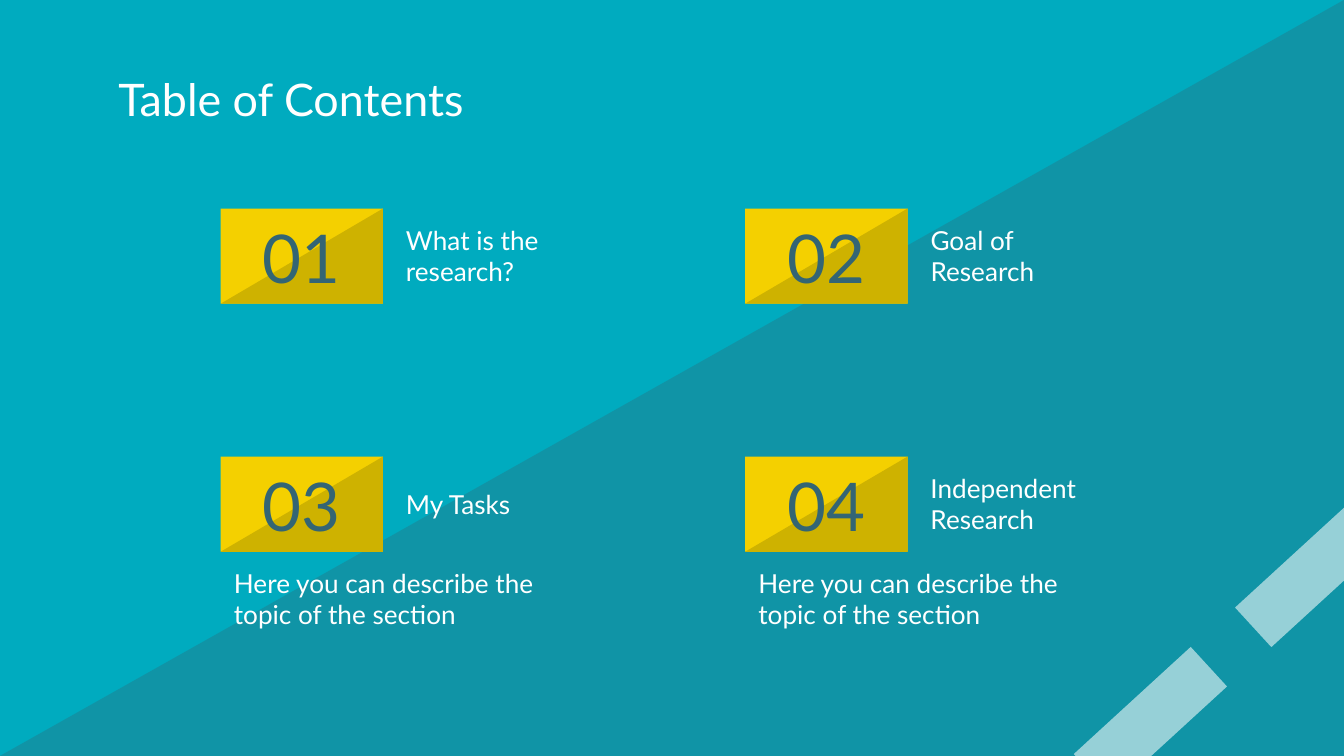
from lxml.etree import SubElement
from pptx import Presentation
from pptx.dml.color import RGBColor
from pptx.enum.shapes import MSO_SHAPE
from pptx.enum.text import MSO_ANCHOR, MSO_AUTO_SIZE, PP_ALIGN
from pptx.oxml.ns import qn
from pptx.util import Pt

TEAL = RGBColor(0x00, 0xAB, 0xBF)
NAVY = RGBColor(0x33, 0x65, 0x74)
YELLOW = RGBColor(0xF4, 0xD0, 0x00)
MUSTARD = RGBColor(0xCE, 0xB2, 0x00)
WHITE = RGBColor(0xFF, 0xFF, 0xFF)

CARD_WIDTH, CARD_HEIGHT = 87, 51
COLUMNS = (118.2, 399.2)
ROWS = (111.7, 244.6)
DESCRIPTION = "Here you can describe the topic of the section"

prs = Presentation()
prs.slide_width, prs.slide_height = Pt(720), Pt(405)
slide = prs.slides.add_slide(prs.slide_layouts[5])
slide.background.fill.solid()
slide.background.fill.fore_color.rgb = TEAL


def add_block(preset, left, top, width, height, color, opacity=100):
    block = slide.shapes.add_shape(preset, Pt(left), Pt(top), Pt(width), Pt(height))
    block.shadow.inherit = False
    block.line.fill.background()
    block.fill.solid()
    block.fill.fore_color.rgb = color
    if opacity < 100:
        tint = block._element.spPr.find(qn("a:solidFill"))[0]
        SubElement(tint, qn("a:alpha"), val=str(opacity * 1000))
    if preset == MSO_SHAPE.RIGHT_TRIANGLE:
        block._element.spPr.find(qn("a:xfrm")).set("flipH", "1")
    return block


def write(holder, text, size, color=WHITE, align=PP_ALIGN.LEFT):
    frame = holder.text_frame
    frame.word_wrap = True
    frame.auto_size = MSO_AUTO_SIZE.NONE
    frame.vertical_anchor = MSO_ANCHOR.MIDDLE
    frame.margin_left = frame.margin_right = Pt(7.2)
    frame.margin_top = frame.margin_bottom = Pt(7.2)
    frame.paragraphs[0].alignment = align
    run = frame.paragraphs[0].add_run()
    run.text = text
    run.font.name = "Lato"
    run.font.size = Pt(size)
    run.font.color.rgb = color


add_block(MSO_SHAPE.RIGHT_TRIANGLE, 0, 0, 720, 405, NAVY, 32)
for left, top in ((573.8, 371.5), (660.2, 293)):
    stripe = add_block(MSO_SHAPE.RECTANGLE, left, top, 85, 28.8, WHITE, 56)
    stripe.rotation = 317.5

title = slide.shapes.title
title.left, title.top, title.width, title.height = Pt(56.2), Pt(30.4), Pt(607.6), Pt(45.2)
write(title, "Table of Contents", 24)

topics = (
    ("What is the research?", 127),
    ("Goal of Research", 112),
    ("My Tasks", 112),
    ("Independent Research", 139),
)
for index, (topic, topic_width) in enumerate(topics):
    row, column = divmod(index, 2)
    left, top = COLUMNS[column], ROWS[row]
    card = add_block(MSO_SHAPE.RECTANGLE, left, top, CARD_WIDTH, CARD_HEIGHT, YELLOW)
    add_block(MSO_SHAPE.RIGHT_TRIANGLE, left, top, CARD_WIDTH, CARD_HEIGHT, MUSTARD)
    number = slide.shapes.add_textbox(Pt(left), Pt(top), Pt(CARD_WIDTH), Pt(CARD_HEIGHT))
    write(number, f"{index + 1:02}", 36, NAVY, PP_ALIGN.CENTER)
    label = slide.shapes.add_textbox(Pt(left + 92.2), Pt(top), Pt(topic_width), Pt(50.6))
    write(label, topic, 14)

for left in COLUMNS:
    description = slide.shapes.add_textbox(Pt(left), Pt(295.4), Pt(204), Pt(50.6))
    write(description, DESCRIPTION, 14)

prs.save("out.pptx")
